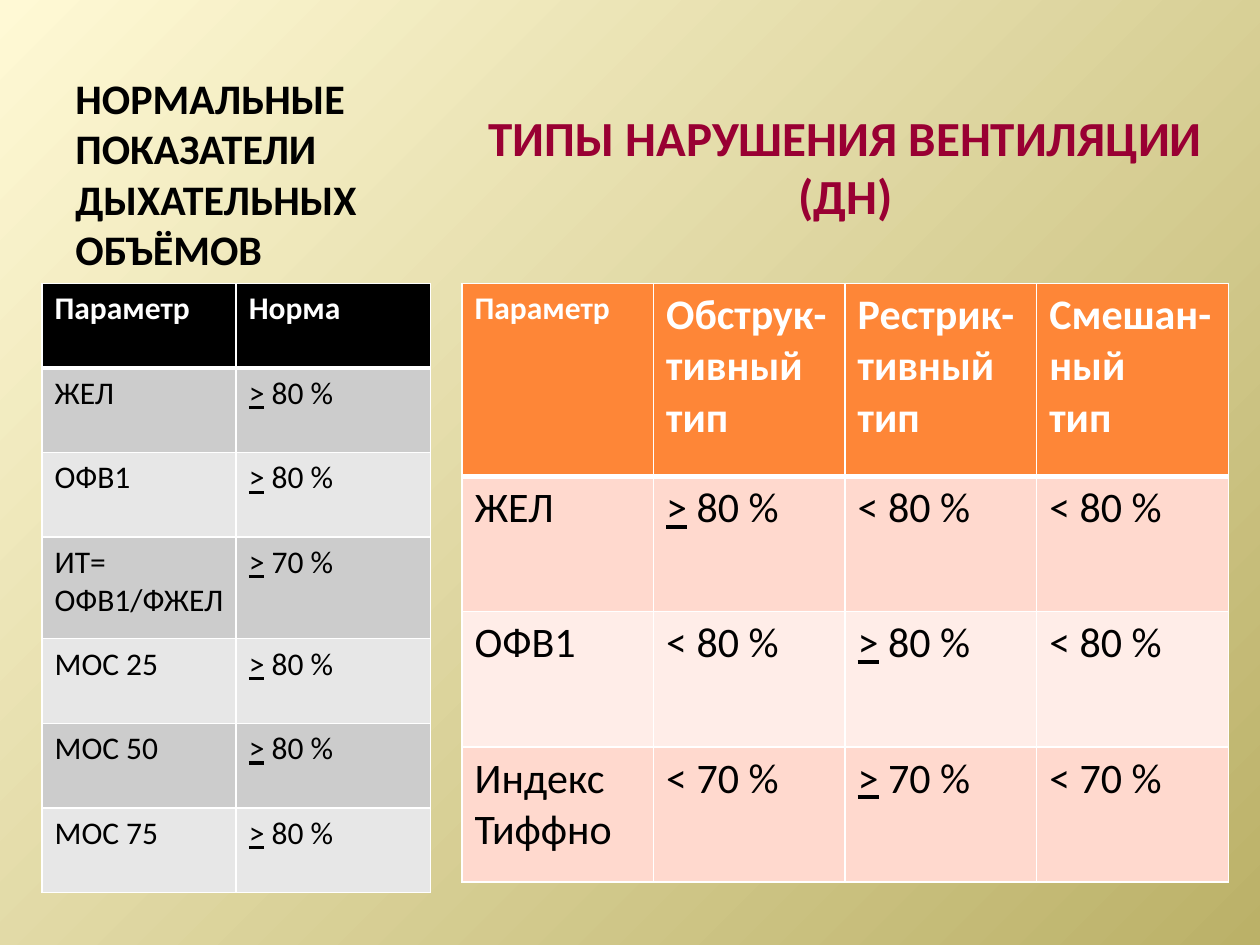
from dataclasses import dataclass

from lxml import etree
from pptx import Presentation
from pptx.dml.color import RGBColor
from pptx.enum.text import MSO_ANCHOR, PP_ALIGN
from pptx.oxml.ns import qn
from pptx.util import Inches, Pt

MIDDLE = MSO_ANCHOR.MIDDLE
LEFT, CENTER = PP_ALIGN.LEFT, PP_ALIGN.CENTER
UNIT = Inches(1) // 12  # grid of 120 columns by 90 rows


@dataclass(frozen=True)
class Theme:
    font: str = "Calibri"
    small: int = 18
    medium: int = 24
    large: int = 28
    ink: str = "000000"
    white: str = "FFFFFF"
    crimson: str = "990033"
    glow: str = "FFF9D5"
    olive: str = "BBB168"
    norms: tuple = ("000000", "CCCCCC", "E7E7E7")  # header, odd, even rows
    types: tuple = ("FE8637", "FFD9CE", "FFEDE8")
    thin: int = 1
    thick: int = 3


THEME = Theme()


def grid(*units):
    return [round(u * UNIT) for u in units]


def add_run(paragraph, text, size, color, bold=False, underline=False):
    run = paragraph.add_run()
    run.text = text
    font = run.font
    font.name, font.size = THEME.font, Pt(size)
    font.bold, font.underline = bold, underline
    font.color.rgb = RGBColor.from_string(color)


def paint_background(slide):
    fill = slide.background.fill
    fill.gradient()
    for stop, color, position in zip(fill.gradient_stops, (THEME.glow, THEME.olive), (0, 1)):
        stop.color.rgb = RGBColor.from_string(color)
        stop.position = position
    # Radiate from the top left corner instead of along a line
    gradient = slide.background._cSld.find(".//" + qn("a:gradFill"))
    gradient.remove(gradient.find(qn("a:lin")))
    circle = etree.SubElement(gradient, qn("a:path"), path="circle")
    etree.SubElement(circle, qn("a:fillToRect"), r="100000", b="100000")


def add_heading(slide, box, text, size, color, align, bottom_inset=0.6):
    frame = slide.shapes.add_textbox(*grid(*box)).text_frame
    frame.word_wrap = True
    frame.vertical_anchor = MIDDLE
    frame.margin_bottom = grid(bottom_inset)[0]
    paragraph = frame.paragraphs[0]
    paragraph.alignment = align
    add_run(paragraph, text, size, color, bold=True)


def set_borders(cell, widths):
    properties = cell._tc.get_or_add_tcPr()
    for side, width in zip("LRTB", widths):
        line = etree.SubElement(properties, qn("a:ln" + side), w=str(Pt(width)))
        solid = etree.SubElement(line, qn("a:solidFill"))
        etree.SubElement(solid, qn("a:srgbClr"), val=THEME.white)


def fill_cell(cell, text, size, color, bold):
    frame = cell.text_frame
    for i, line in enumerate(text.split("\n")):
        paragraph = frame.add_paragraph() if i else frame.paragraphs[0]
        if line.startswith(">"):  # underlined sign reads "at least"
            add_run(paragraph, ">", size, color, bold, underline=True)
            line = line[1:]
        add_run(paragraph, line, size, color, bold)


def add_data_table(slide, box, rows, row_shares, palette, size, small_headers):
    columns = len(rows[0])
    table = slide.shapes.add_table(len(rows), columns, *grid(*box)).table
    for column in table.columns:
        column.width = grid(box[2] / columns)[0]
    for row, share in zip(table.rows, row_shares):
        row.height = grid(box[3] * share / sum(row_shares))[0]

    header_fill, *bands = palette
    for r, texts in enumerate(rows):
        header = r == 0
        top = THEME.thick if r == 1 else THEME.thin
        bottom = THEME.thick if header else THEME.thin
        for c, text in enumerate(texts):
            cell = table.cell(r, c)
            set_borders(cell, (THEME.thin, THEME.thin, top, bottom))
            cell.fill.solid()
            cell.fill.fore_color.rgb = RGBColor.from_string(
                header_fill if header else bands[(r - 1) % 2])
            text_size = THEME.small if header and c < small_headers else size
            fill_cell(cell, text, text_size, THEME.white if header else THEME.ink, header)


def add_norms(slide, left, top):
    """Normal values of the breathing volumes."""
    add_heading(slide, (left + 2, top - 21, 39, 21),
                "НОРМАЛЬНЫЕ ПОКАЗАТЕЛИ ДЫХАТЕЛЬНЫХ ОБЪЁМОВ",
                THEME.medium, THEME.ink, LEFT)
    norms = [("Параметр", "Норма"), ("ЖЕЛ", "> 80 %"), ("ОФВ1", "> 80 %"),
             ("ИТ= ОФВ1/ФЖЕЛ", "> 70 %"), ("МОС 25", "> 80 %"),
             ("МОС 50", "> 80 %"), ("МОС 75", "> 80 %")]
    shares = [1.2 if "ИТ" in name else 1 for name, _ in norms]
    add_data_table(slide, (left, top, 37, 58), norms, shares,
                   THEME.norms, THEME.small, small_headers=2)


def add_disorder_types(slide, left, top):
    """Types of ventilation disorder."""
    add_heading(slide, (left, top - 15, 73, 12), "ТИПЫ НАРУШЕНИЯ ВЕНТИЛЯЦИИ (ДН)",
                THEME.large, THEME.crimson, CENTER, bottom_inset=5)
    types = [("Параметр", "Обструк-тивный тип", "Рестрик-тивный тип", "Смешан-ный\nтип"),
             ("ЖЕЛ", "> 80 %", "< 80 %", "< 80 %"),
             ("ОФВ1", "< 80 %", "> 80 %", "< 80 %"),
             ("Индекс\nТиффно", "< 70 %", "> 70 %", "< 70 %")]
    add_data_table(slide, (left, top, 73, 57), types, (1.43, 1, 1, 1),
                   THEME.types, THEME.medium, small_headers=1)


def main():
    deck = Presentation()
    deck.slide_width, deck.slide_height = grid(120, 90)
    slide = deck.slides.add_slide(deck.slide_layouts[6])
    paint_background(slide)
    add_disorder_types(slide, left=44, top=27)
    add_norms(slide, left=4, top=27)
    deck.save("out.pptx")


if __name__ == "__main__":
    main()
